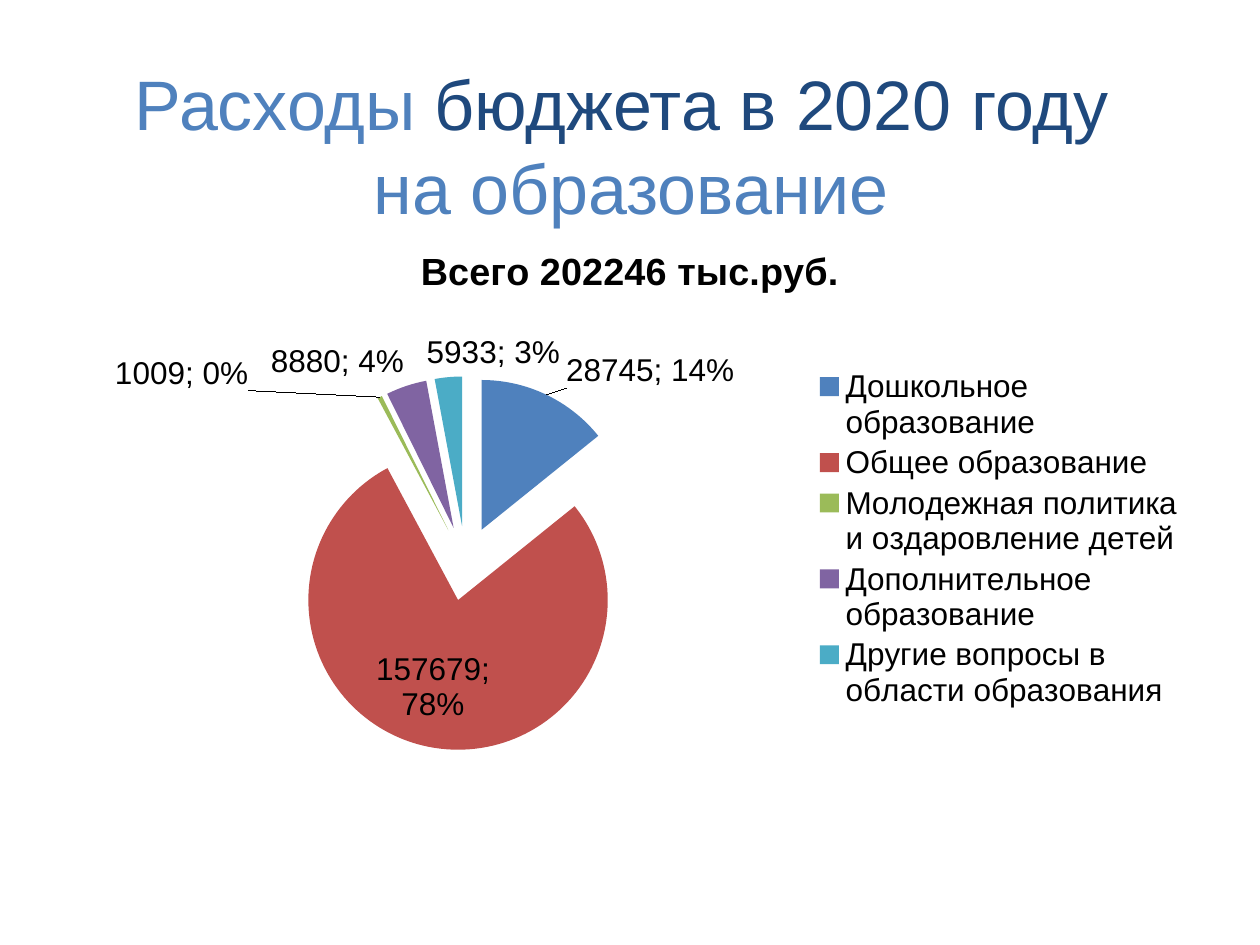
"""Build the slide on education spending in the 2020 budget."""
from pptx import Presentation
from pptx.chart.data import CategoryChartData
from pptx.dml.color import RGBColor
from pptx.enum.chart import XL_CHART_TYPE, XL_LABEL_POSITION, XL_LEGEND_POSITION
from pptx.enum.text import MSO_ANCHOR, PP_ALIGN
from pptx.oxml import parse_xml
from pptx.oxml.ns import nsdecls
from pptx.util import Inches, Pt

PIE = XL_CHART_TYPE.PIE_EXPLODED
BEST_FIT = XL_LABEL_POSITION.BEST_FIT
RIGHT = XL_LEGEND_POSITION.RIGHT
CENTER, MIDDLE = PP_ALIGN.CENTER, MSO_ANCHOR.MIDDLE

THEME = {
    "font": "Arial", "title_size": 40, "chart_title_size": 21.6, "chart_size": 18,
    "text": "000000", "blue": "4F81BD", "navy": "1F497D",
}
TITLE_LINES = [
    [("Расходы", "blue"), (" бюджета в 2020 году ", "navy")],
    [("на образование", "blue")],
]
CHART_TITLE = "Всего 202246 тыс.руб."
SPENDING = [
    ("Дошкольное образование", 28745, "4F81BD"),
    ("Общее образование", 157679, "C0504D"),
    ("Молодежная политика и оздаровление детей", 1009, "9BBB59"),
    ("Дополнительное образование", 8880, "8064A2"),
    ("Другие вопросы в области образования", 5933, "4BACC6"),
]
EXPLOSION = 25
PLOT_AREA = (0.19, 0.25, 0.33, 0.6)
LEGEND_AREA = (0.66, 0.23, 0.33, 0.56)


def style_font(font, size, color, bold=False):
    font.name = THEME["font"]
    font.size = Pt(size)
    font.bold = bold
    font.color.rgb = RGBColor.from_string(color)


def layout_xml(area, target=""):
    left, top, width, height = area
    return parse_xml(
        f'<c:layout {nsdecls("c")}><c:manualLayout>{target}'
        '<c:xMode val="edge"/><c:yMode val="edge"/>'
        f'<c:x val="{left}"/><c:y val="{top}"/><c:w val="{width}"/><c:h val="{height}"/>'
        '</c:manualLayout></c:layout>')


def set_layout(element, layout, before):
    for old in element.xpath("c:layout"):
        element.remove(old)
    element.xpath(before)[0].addprevious(layout)


def add_title(page):
    title = page.shapes.title
    title.left, title.top, title.width, title.height = map(Inches, (0.51, 0.52, 9, 1.25))
    frame = title.text_frame
    frame.vertical_anchor = MIDDLE
    para = frame.paragraphs[0]
    para.alignment = CENTER
    for number, line in enumerate(TITLE_LINES):
        if number:
            para.add_line_break()
        for text, color in line:
            span = para.add_run()
            span.text = text
            style_font(span.font, THEME["title_size"], THEME[color])


def add_spending_chart(page):
    data = CategoryChartData()
    data.categories = [name for name, _, _ in SPENDING]
    data.add_series("Series 1", [value for _, value, _ in SPENDING])
    chart = page.shapes.add_chart(
        PIE, Inches(0.5), Inches(1.75), Inches(9), Inches(4.95), data).chart
    style_font(chart.font, THEME["chart_size"], THEME["text"])

    chart.has_title = True
    heading = chart.chart_title.text_frame.paragraphs[0]
    heading.text = CHART_TITLE
    style_font(heading.font, THEME["chart_title_size"], THEME["text"], bold=True)

    chart.has_legend = True
    legend = chart.legend
    legend.position = RIGHT
    legend.include_in_layout = False
    style_font(legend.font, THEME["chart_size"], THEME["text"])
    set_layout(legend._element, layout_xml(LEGEND_AREA), "c:overlay")

    plot = chart.plots[0]
    plot.vary_by_categories = True
    inner = '<c:layoutTarget val="inner"/>'
    set_layout(plot._element.getparent(), layout_xml(PLOT_AREA, inner), "c:pieChart")

    series = plot.series[0]
    for explosion in series._element.xpath("c:explosion"):
        explosion.set("val", str(EXPLOSION))
    for index, (_, _, color) in enumerate(SPENDING):
        fill = series.points[index].format.fill
        fill.solid()
        fill.fore_color.rgb = RGBColor.from_string(color)

    labels = series.data_labels
    labels.show_value = True
    labels.show_percentage = True
    labels.position = BEST_FIT
    style_font(labels.font, THEME["chart_size"], THEME["text"])
    separator = parse_xml(f'<c:separator {nsdecls("c")}>; </c:separator>')
    labels._element.xpath("c:showBubbleSize")[0].addnext(separator)


deck = Presentation()
deck.slide_width, deck.slide_height = Inches(10), Inches(7.5)
page = deck.slides.add_slide(deck.slide_layouts[5])
add_title(page)
add_spending_chart(page)
deck.save("out.pptx")
